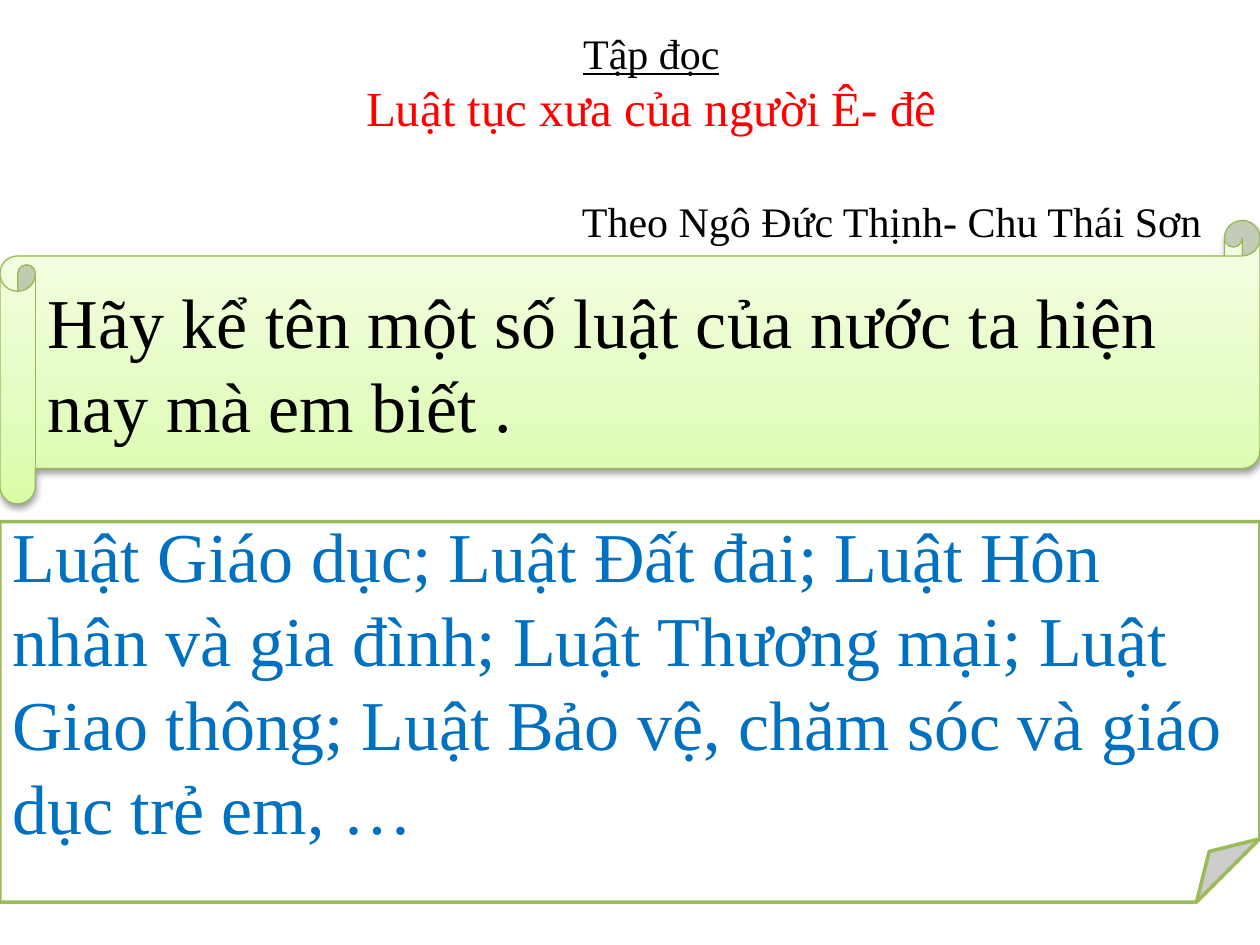
"""Build a reading-lesson slide with a question scroll and an answer note."""
from copy import deepcopy
from dataclasses import dataclass

from lxml.etree import SubElement as Sub
from pptx import Presentation
from pptx.dml.color import RGBColor
from pptx.enum.shapes import MSO_SHAPE as Kind
from pptx.enum.text import MSO_ANCHOR as Anchor, PP_ALIGN as Align
from pptx.oxml.ns import qn
from pptx.shapes.autoshape import Shape
from pptx.slide import Slide
from pptx.util import Emu, Pt

SCALE = 9144
FONT = "Times New Roman"


@dataclass
class Line:
    """One paragraph and its look."""
    text: str
    size: int
    color: str = "000000"
    under: bool = False
    align: Align = Align.LEFT


@dataclass
class Box:
    """A place on the slide in px."""
    left: int
    top: int
    width: int
    height: int

    def emu(self) -> list[Emu]:
        """Give the four lengths in EMU."""
        return [Emu(n * SCALE) for n in (self.left, self.top, self.width, self.height)]


def rgb(code: str) -> RGBColor:
    """Turn a hex string into a colour."""
    return RGBColor.from_string(code)


def write(shape: Shape, lines: list[Line], anchor: Anchor, wrap: bool = True) -> None:
    """Fill a shape with paragraphs."""
    frame = shape.text_frame
    frame.word_wrap = wrap
    frame.vertical_anchor = anchor
    for i, line in enumerate(lines):
        para = frame.add_paragraph() if i else frame.paragraphs[0]
        para.alignment = line.align
        run = para.add_run()
        run.text = line.text
        font = run.font
        font.name, font.size = FONT, Pt(line.size)
        font.underline = line.under
        font.color.rgb = rgb(line.color)


def label(slide: Slide, box: Box, lines: list[Line], wrap: bool = True) -> None:
    """Add a text box."""
    write(slide.shapes.add_textbox(*box.emu()), lines, Anchor.TOP, wrap)


def panel(slide: Slide, kind: Kind, box: Box, edge: str, width: float, line: Line) -> Shape:
    """Add an outlined shape with centred text."""
    shape = slide.shapes.add_shape(kind, *box.emu())
    shape.shadow.inherit = False
    shape.line.color.rgb = rgb(edge)
    shape.line.width = Pt(width)
    write(shape, [line], Anchor.MIDDLE)
    return shape


def blend(shape: Shape, stops: list[tuple[str, float]]) -> None:
    """Fill a shape with a gradient that rises from the bottom."""
    fill = shape.fill
    fill.gradient()
    fill.gradient_angle = 90
    group = next(shape.element.spPr.iter(qn("a:gsLst")))
    while len(group) < len(stops):
        group.append(deepcopy(group[0]))
    for stop, (code, place) in zip(fill.gradient_stops, stops):
        stop.color.rgb = rgb(code)
        stop.position = place


def shade(shape: Shape) -> None:
    """Drop a soft black shadow below a shape."""
    group = shape.element.spPr.find(qn("a:effectLst"))
    drop = Sub(group, qn("a:outerShdw"), blurRad=str(Pt(3.1)), dist=str(Pt(1.6)),
               dir="5400000", rotWithShape="0")
    tint = Sub(drop, qn("a:srgbClr"), val="000000")
    Sub(tint, qn("a:alpha"), val="38000")


def main() -> None:
    """Draw the slide and save it."""
    deck = Presentation()
    deck.slide_width, deck.slide_height = Emu(1000 * SCALE), Emu(750 * SCALE)
    slide = deck.slides.add_slide(deck.slide_layouts[6])

    scroll = panel(slide, Kind.HORIZONTAL_SCROLL, Box(0, 175, 1000, 225), "98B955", 0.75,
                   Line("Hãy kể tên một số luật của nước ta hiện nay mà em biết .", 40))
    blend(scroll, [("DAFDA7", 0), ("E4FCC2", 0.35), ("F5FFE7", 1)])
    shade(scroll)

    label(slide, Box(67, 17, 900, 83), [
        Line("Tập đọc", 24, under=True, align=Align.CENTER),
        Line("Luật tục xưa của người Ê- đê", 28, "FF0000", align=Align.CENTER),
    ])

    note = panel(slide, Kind.FOLDED_CORNER, Box(0, 414, 1000, 302), "9BBB59", 2,
                 Line("Luật Giáo dục; Luật Đất đai; Luật Hôn nhân và gia đình; "
                      "Luật Thương mại; Luật Giao thông; Luật Bảo vệ, chăm sóc "
                      "và giáo dục trẻ em, …", 40, "0070C0"))
    note.fill.solid()
    note.fill.fore_color.rgb = rgb("FFFFFF")

    label(slide, Box(452, 150, 517, 50),
          [Line("Theo Ngô Đức Thịnh- Chu Thái Sơn", 24)], wrap=False)
    deck.save("out.pptx")


if __name__ == "__main__":
    main()
